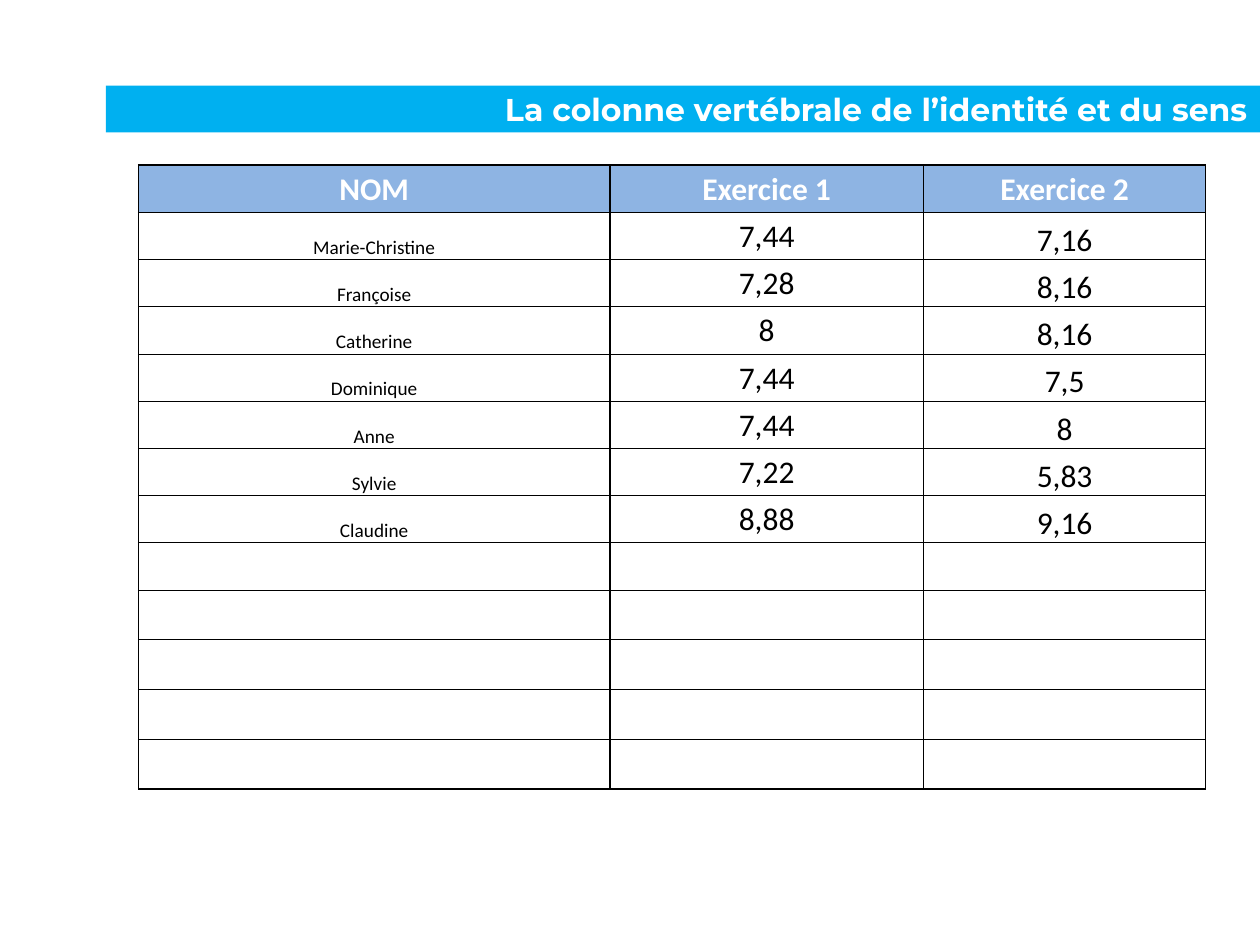
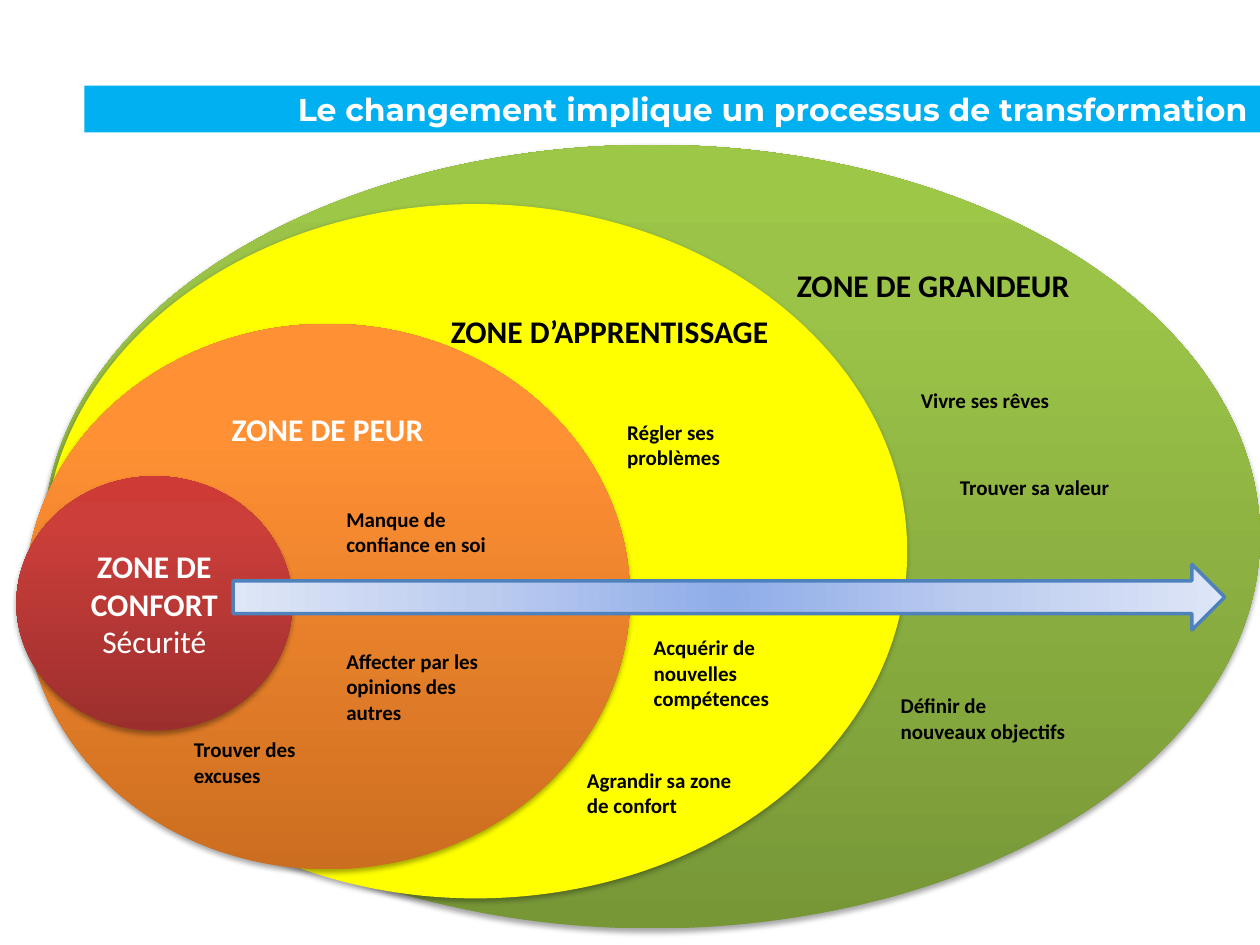
import pptx
import pptx.util
import pptx.dml.color
import pptx.enum.shapes
import pptx.enum.text
import pptx.oxml.ns
import lxml.etree
import dataclasses

BANDS = [
    ("La colonne vertébrale de l’identité et du sens", 8.4),
    ("Le changement implique un processus de transformation", 6.7),
]
HEADS = ["NOM", "Exercice 1", "Exercice 2"]
SCORES = [
    ("Marie-Christine", "7,44", "7,16"),
    ("Françoise", "7,28", "8,16"),
    ("Catherine", "8", "8,16"),
    ("Dominique", "7,44", "7,5"),
    ("Anne", "7,44", "8"),
    ("Sylvie", "7,22", "5,83"),
    ("Claudine", "8,88", "9,16"),
]
BLANKS = 5
COLS = [37.4, 24.9, 22.4]
ROWS = [5] * 9 + [5.26] * 4

ZONES = [
    (["ZONE DE GRANDEUR"], (3.5, 15.33, 96.5, 82.93), "green", "black", "right", "top"),
    (["ZONE D’APPRENTISSAGE"], (3.5, 21.6, 68.5, 73.47), "yellow", "black", "right", "top"),
    (["ZONE DE PEUR"], (2, 34.27, 48, 57.73), "orange", "white", "center", "top"),
    (["ZONE DE CONFORT", "Sécurité"], (1.3, 50.4, 21.9, 26.93), "red", "white", "center", "middle"),
]
ARROW = (18.5, 59.73, 78.7, 6.93)
NOTES = [
    ("Manque de confiance en soi", 26.5, 52.93, 2),
    ("Trouver des excuses", 14.4, 77.33, 2),
    ("Affecter par les opinions des autres", 26.5, 68, 3),
    ("Régler ses problèmes", 48.8, 43.73, 2),
    ("Acquérir de nouvelles compétences", 50.9, 66.53, 3),
    ("Agrandir sa zone de confort", 45.6, 80.53, 2),
    ("Vivre ses rêves", 72.1, 40.4, 1),
    ("Trouver sa valeur", 75.2, 49.6, 1),
    ("Définir de nouveaux objectifs", 70.5, 72.67, 2),
]


@dataclasses.dataclass(frozen=True)
class Theme:
    white: str = "FFFFFF"
    black: str = "000000"
    band: str = "00B0F0"
    head: str = "8EB4E3"
    edge: str = "4F81BD"
    yellow: str = "FFFF00"
    green: tuple = ((0, "779737"), (80, "9BC348"), (100, "9DC746"))
    orange: tuple = ((0, "CC6E20"), (80, "FF9034"), (100, "FF9136"))
    red: tuple = ((0, "9C2F2D"), (80, "CB3E3A"), (100, "CE3B37"))
    arrow: tuple = ((0, "8FADE9"), (50, "BCCCEF"), (100, "DEE6F7"))
    face: str = "Calibri"
    title: str = "Montserrat"
    big: int = 18
    note: int = 12
    name: int = 11


THEME = Theme()
KIND = pptx.enum.shapes.MSO_SHAPE
WIDE = pptx.util.Inches(10)
HIGH = pptx.util.Inches(7.5)
ALIGN = {
    "left": pptx.enum.text.PP_ALIGN.LEFT,
    "center": pptx.enum.text.PP_ALIGN.CENTER,
    "right": pptx.enum.text.PP_ALIGN.RIGHT,
}
ANCHOR = {
    "top": pptx.enum.text.MSO_ANCHOR.TOP,
    "middle": pptx.enum.text.MSO_ANCHOR.MIDDLE,
    "bottom": pptx.enum.text.MSO_ANCHOR.BOTTOM,
}


def across(part):
    return round(WIDE * part / 100)


def down(part):
    return round(HIGH * part / 100)


def place(box):
    left, top, width, height = box
    return across(left), down(top), across(width), down(height)


def tint(code):
    return pptx.dml.color.RGBColor.from_string(code)


def node(base, tag, **values):
    return lxml.etree.SubElement(
        base, pptx.oxml.ns.qn("a:" + tag), {key: str(val) for key, val in values.items()})


def write(frame, lines, size=THEME.big, face=THEME.face, color=THEME.black,
          bold=(True,), align="left"):
    for spot, line in enumerate(lines):
        para = frame.paragraphs[0] if spot == 0 else frame.add_paragraph()
        para.alignment = ALIGN[align]
        run = para.add_run()
        run.text = line
        run.font.size = pptx.util.Pt(size)
        run.font.name = face
        run.font.bold = bold[min(spot, len(bold) - 1)]
        run.font.color.rgb = tint(color)


def paint(shape, fill, radial=False):
    if isinstance(fill, str):
        shape.fill.solid()
        shape.fill.fore_color.rgb = tint(fill)
        return
    shape.fill.gradient()
    grad = shape.element.spPr.find(pptx.oxml.ns.qn("a:gradFill"))
    grad.clear()
    stops = node(grad, "gsLst")
    for pos, code in fill:
        node(node(stops, "gs", pos=pos * 1000), "srgbClr", val=code)
    if radial:
        ring = node(grad, "path", path="circle")
        node(ring, "fillToRect", l=50000, t=50000, r=50000, b=50000)
    else:
        node(grad, "lin", ang=270 * 60000, scaled=0)


def draw(slide, kind, box, fill, radial=False):
    shape = slide.shapes.add_shape(kind, *place(box))
    paint(shape, fill, radial)
    shape.line.fill.background()
    shape.shadow.inherit = False
    return shape


def shade(shape):
    base = shape.element.spPr.find(pptx.oxml.ns.qn("a:effectLst"))
    cast = node(base, "outerShdw", blurRad=pptx.util.Pt(3.1), dist=pptx.util.Pt(1.8),
                dir=90 * 60000, rotWithShape=0)
    node(node(cast, "srgbClr", val=THEME.black), "alpha", val=35000)


def title(slide, text, left):
    band = draw(slide, KIND.RECTANGLE, (left, 9.07, 100 - left, 4.93), THEME.band)
    band.text_frame.word_wrap = True
    band.text_frame.vertical_anchor = ANCHOR["middle"]
    write(band.text_frame, [text], face=THEME.title, color=THEME.white, align="right")


def border(cell, row, col):
    props = cell._tc.get_or_add_tcPr()
    sides = {
        "lnL": 0.5 if col == 2 else 1,
        "lnR": 0.5 if col == 1 else 1,
        "lnT": 1 if row == 0 else 0.5,
        "lnB": 1 if row == len(ROWS) - 1 else 0.5,
    }
    for side, width in sides.items():
        line = node(props, side, w=pptx.util.Pt(width))
        node(node(line, "solidFill"), "srgbClr", val=THEME.black)


def grid(slide):
    table = slide.shapes.add_table(
        len(ROWS), len(COLS), *place((11, 17.47, sum(COLS), sum(ROWS)))).table
    table.first_row = table.horz_banding = False
    for col, width in enumerate(COLS):
        table.columns[col].width = across(width)
    data = [HEADS] + SCORES + [("",) * len(COLS)] * BLANKS
    for row, texts in enumerate(data):
        table.rows[row].height = down(ROWS[row])
        for col, text in enumerate(texts):
            cell = table.cell(row, col)
            cell.margin_left = cell.margin_right = cell.margin_top = pptx.util.Inches(0.01)
            cell.margin_bottom = 0
            top = row == 0
            cell.vertical_anchor = ANCHOR["middle" if top or col == 1 else "bottom"]
            border(cell, row, col)
            if top:
                cell.fill.solid()
                cell.fill.fore_color.rgb = tint(THEME.head)
            else:
                cell.fill.background()
            if text:
                write(cell.text_frame, [text], align="center", bold=(top,),
                      size=THEME.name if col == 0 and not top else THEME.big,
                      color=THEME.white if top else THEME.black)


def zones(slide):
    for lines, box, fill, color, align, anchor in ZONES:
        oval = draw(slide, KIND.OVAL, box, getattr(THEME, fill))
        shade(oval)
        oval.text_frame.word_wrap = True
        oval.text_frame.vertical_anchor = ANCHOR[anchor]
        write(oval.text_frame, lines, color=getattr(THEME, color),
              align=align, bold=(True, False))
    arrow = draw(slide, KIND.RIGHT_ARROW, ARROW, THEME.arrow, radial=True)
    arrow.line.color.rgb = tint(THEME.edge)
    arrow.line.width = pptx.util.Pt(2)
    for text, left, top, lines in NOTES:
        box = slide.shapes.add_textbox(*place((left, top, 15.4, 1.27 + 2.73 * lines)))
        box.text_frame.word_wrap = True
        box.text_frame.auto_size = pptx.enum.text.MSO_AUTO_SIZE.SHAPE_TO_FIT_TEXT
        write(box.text_frame, [text], size=THEME.note)


def main():
    deck = pptx.Presentation()
    deck.slide_width, deck.slide_height = WIDE, HIGH
    for fill, (text, left) in zip((grid, zones), BANDS):
        slide = deck.slides.add_slide(deck.slide_layouts[6])
        fill(slide)
        title(slide, text, left)
    deck.save("out.pptx")


if __name__ == "__main__":
    main()
